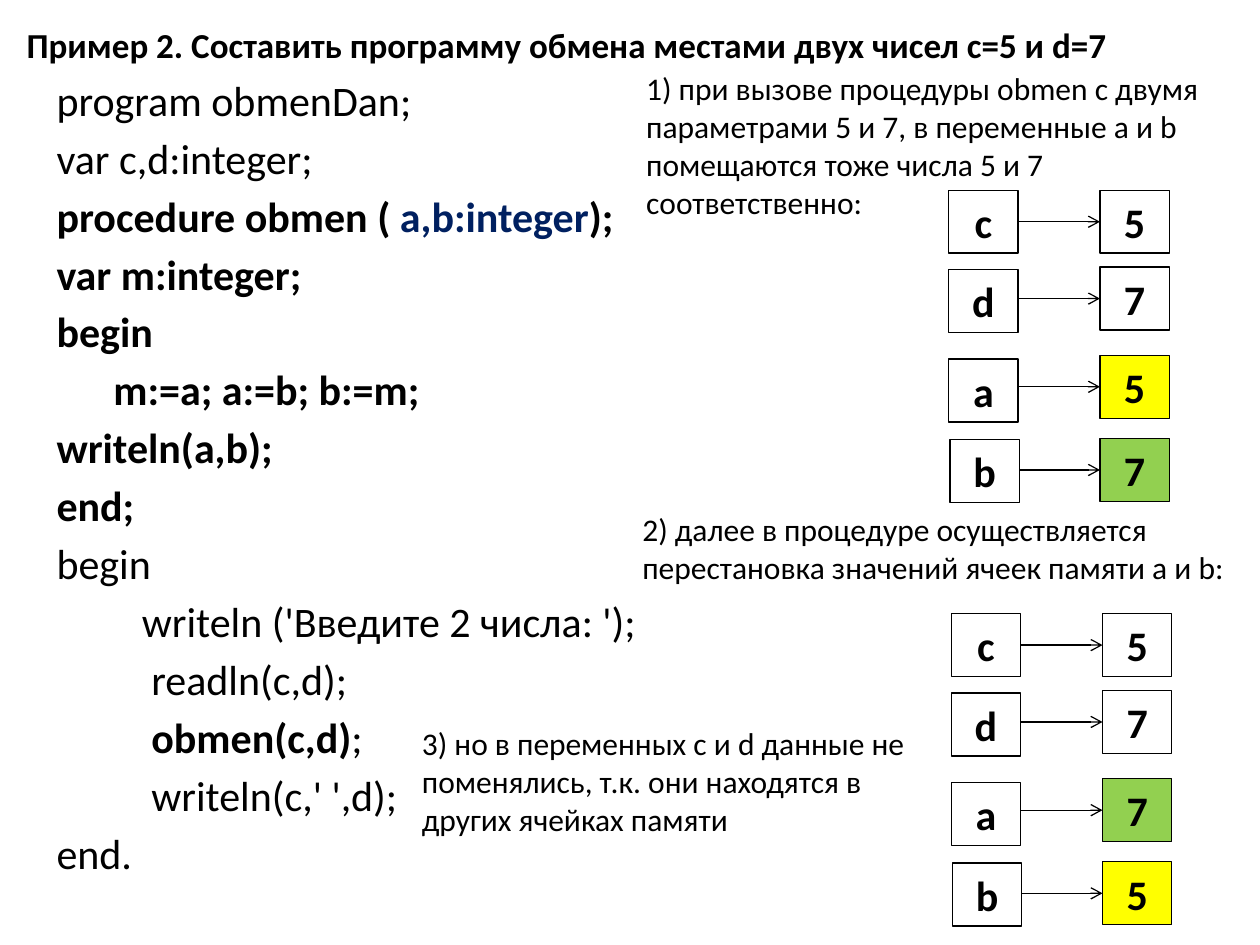
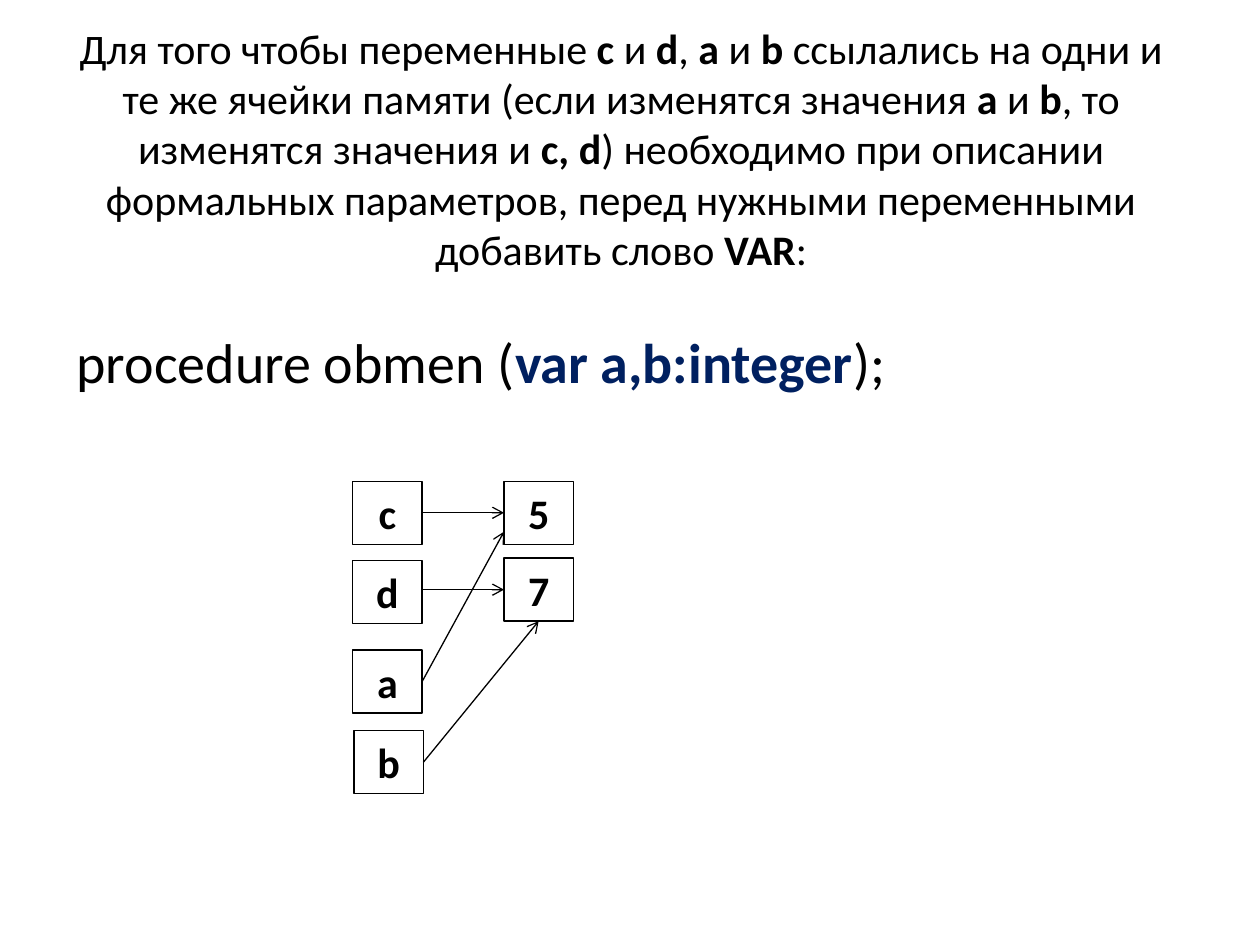
from lxml import etree
from pptx import Presentation
from pptx.dml.color import RGBColor
from pptx.enum.shapes import MSO_CONNECTOR, MSO_SHAPE
from pptx.enum.text import MSO_ANCHOR, PP_ALIGN
from pptx.oxml.ns import qn
from pptx.util import Inches, Pt

RECT, STRAIGHT = MSO_SHAPE.RECTANGLE, MSO_CONNECTOR.STRAIGHT
LEFT, CENTER = PP_ALIGN.LEFT, PP_ALIGN.CENTER
TOP, MIDDLE = MSO_ANCHOR.TOP, MSO_ANCHOR.MIDDLE
SIDE_LEFT, SIDE_BOTTOM, SIDE_RIGHT = 1, 2, 3

BLACK = RGBColor(0x00, 0x00, 0x00)
NAVY = RGBColor(0x00, 0x20, 0x60)
YELLOW = RGBColor(0xFF, 0xFF, 0x00)
GREEN = RGBColor(0x92, 0xD0, 0x50)
FONT = "Calibri"

# Content: ** switches bold on and off, ~ switches navy on and off
EXAMPLE_TITLE = "**Пример 2. Составить программу обмена местами двух чисел с=5 и d=7**"
PROGRAM = [  # (indent in spaces, code)
    (0, "program obmenDan;"),
    (0, "var c,d:integer;"),
    (0, "**procedure obmen ( ~a,b:integer~);**"),
    (0, "**var m:integer;**"),
    (0, "**begin**"),
    (6, "**m:=a; a:=b; b:=m;**"),
    (0, "**writeln(a,b);**"),
    (0, "**end;**"),
    (0, "begin"),
    (9, "writeln ('Введите 2 числа: ');"),
    (10, "readln(c,d);"),
    (10, "**obmen(c,d)**;"),
    (10, "writeln(c,' ',d);"),
    (0, "end."),
]
STEPS = [  # (left, top, width, height), text
    ((5.03, 0.5, 5, 1.31), "1) при вызове процедуры obmen с двумя параметрами 5 и 7, "
                           "в переменные a и b помещаются тоже числа 5 и 7 соответственно:"),
    ((5, 4, 5, 0.71), "2) далее в процедуре осуществляется перестановка значений "
                      "ячеек памяти a и b:"),
    ((3.25, 5.7, 4.25, 1.01), "3) но в переменных c и d данные не поменялись, "
                              "т.к. они находятся в других ячейках памяти"),
]
VAR_TITLE = ("Для того чтобы переменные **c** и **d**, **a** и **b** ссылались на одни и те же "
             "ячейки памяти (если изменятся значения **a** и **b**, то изменятся значения и "
             "**c, d**) необходимо при описании формальных параметров, перед нужными "
             "переменными добавить слово **VAR**:")
VAR_HEADER = "procedure obmen (**~var a,b:integer~**);"

NAMES = ["с", "d", "a", "b"]
OUTER_CELLS = [("5", None), ("7", None)]
BEFORE_SWAP = OUTER_CELLS + [("5", YELLOW), ("7", GREEN)]
AFTER_SWAP = OUTER_CELLS + [("7", GREEN), ("5", YELLOW)]

# Memory diagram grid, inches from its top left corner
CELL_W, CELL_H, VALUE_X = 0.55, 0.5, 1.2
NAME_SPOTS = [(0, 0), (0, 0.63), (0, 1.34), (0.01, 1.98)]
VALUE_ROWS = [0, 0.61, 1.31, 1.97]
SPACE_EM = 0.226  # width of a blank in the font


def write(paragraph, text, size, align=LEFT):
    paragraph.alignment = align
    for bold, chunk in enumerate(text.split("**")):
        for navy, piece in enumerate(chunk.split("~")):
            if not piece:
                continue
            run = paragraph.add_run()
            run.text = piece
            run.font.color.rgb = NAVY if navy % 2 else BLACK
            look = {"name": FONT, "size": Pt(size), "bold": bool(bold % 2)}
            for key, value in look.items():
                setattr(run.font, key, value)


def add_text(slide, box, lines, size, align=LEFT, anchor=TOP):
    frame = slide.shapes.add_textbox(*map(Inches, box)).text_frame
    frame.word_wrap = True
    frame.vertical_anchor = anchor
    for i, (indent, text) in enumerate(lines):
        paragraph = frame.paragraphs[0] if i == 0 else frame.add_paragraph()
        write(paragraph, text, size, align)
        if i:
            paragraph.space_before = Pt(size * 0.18)
        if indent:
            margin = Pt(indent * size * SPACE_EM)
            paragraph._p.get_or_add_pPr().set("marL", str(int(margin)))


def add_cell(slide, x, y, text, fill=None):
    cell = slide.shapes.add_shape(RECT, *map(Inches, (x, y, CELL_W, CELL_H)))
    cell.shadow.inherit = False
    if fill is None:
        cell.fill.background()
    else:
        cell.fill.solid()
        cell.fill.fore_color.rgb = fill
    cell.line.color.rgb = BLACK
    cell.line.width = Pt(0.75)
    cell.text_frame.vertical_anchor = TOP
    write(cell.text_frame.paragraphs[0], f"**{text}**", 24, CENTER)
    return cell


def add_arrow(slide, start, end):
    arrow = slide.shapes.add_connector(STRAIGHT, *map(Inches, start + end))
    arrow.line.color.rgb = BLACK
    arrow.line.width = Pt(0.75)
    etree.SubElement(arrow.line._get_or_add_ln(), qn("a:tailEnd"), type="arrow")
    etree.SubElement(arrow._element.spPr, qn("a:effectLst"))
    return arrow


def add_memory(slide, left, top, cells):
    """Draw the variables, their values and the level arrows between them."""
    names = [add_cell(slide, left + dx, top + dy, name)
             for name, (dx, dy) in zip(NAMES, NAME_SPOTS)]
    values = []
    for row, ((value, fill), dy) in enumerate(zip(cells, VALUE_ROWS)):
        values.append(add_cell(slide, left + VALUE_X, top + dy, value, fill))
        y = top + dy + CELL_H / 2
        start = left + NAME_SPOTS[row][0] + CELL_W
        arrow = add_arrow(slide, (start, y), (left + VALUE_X, y))
        if dy == NAME_SPOTS[row][1]:
            arrow.begin_connect(names[row], SIDE_RIGHT)
        arrow.end_connect(values[row], SIDE_LEFT)
    return names, values


def build_example(slide):
    add_text(slide, (0, 0, 9, 0.71), [(0, EXAMPLE_TITLE)], 20, CENTER, MIDDLE)
    add_text(slide, (0.35, 0.54, 5.35, 6.7), PROGRAM, 24)
    add_memory(slide, 7.53, 1.51, BEFORE_SWAP)
    add_memory(slide, 7.55, 4.87, AFTER_SWAP)
    for box, text in STEPS:
        add_text(slide, box, [(0, text)], 18)


def build_var_parameters(slide):
    add_text(slide, (0.43, 0.13, 9, 2.09), [(0, VAR_TITLE)], 24, CENTER, MIDDLE)
    add_text(slide, (0.51, 2.55, 9, 0.7), [(0, VAR_HEADER)], 32)
    left, top = 2.8, 3.82
    (_, _, a, b), (_, seven) = add_memory(slide, left, top, OUTER_CELLS)

    # a and b point at the cells of c and d
    to_five = add_arrow(slide, (0, 0), (left + VALUE_X, top + 0.8 * CELL_H))
    to_five.begin_connect(a, SIDE_RIGHT)
    to_seven = add_arrow(slide, (0, 0), (left, top))
    to_seven.begin_connect(b, SIDE_RIGHT)
    to_seven.end_connect(seven, SIDE_BOTTOM)


def main():
    deck = Presentation()
    deck.slide_width, deck.slide_height = Inches(10), Inches(7.5)
    for build in (build_example, build_var_parameters):
        build(deck.slides.add_slide(deck.slide_layouts[6]))
    deck.save("out.pptx")


if __name__ == "__main__":
    main()
